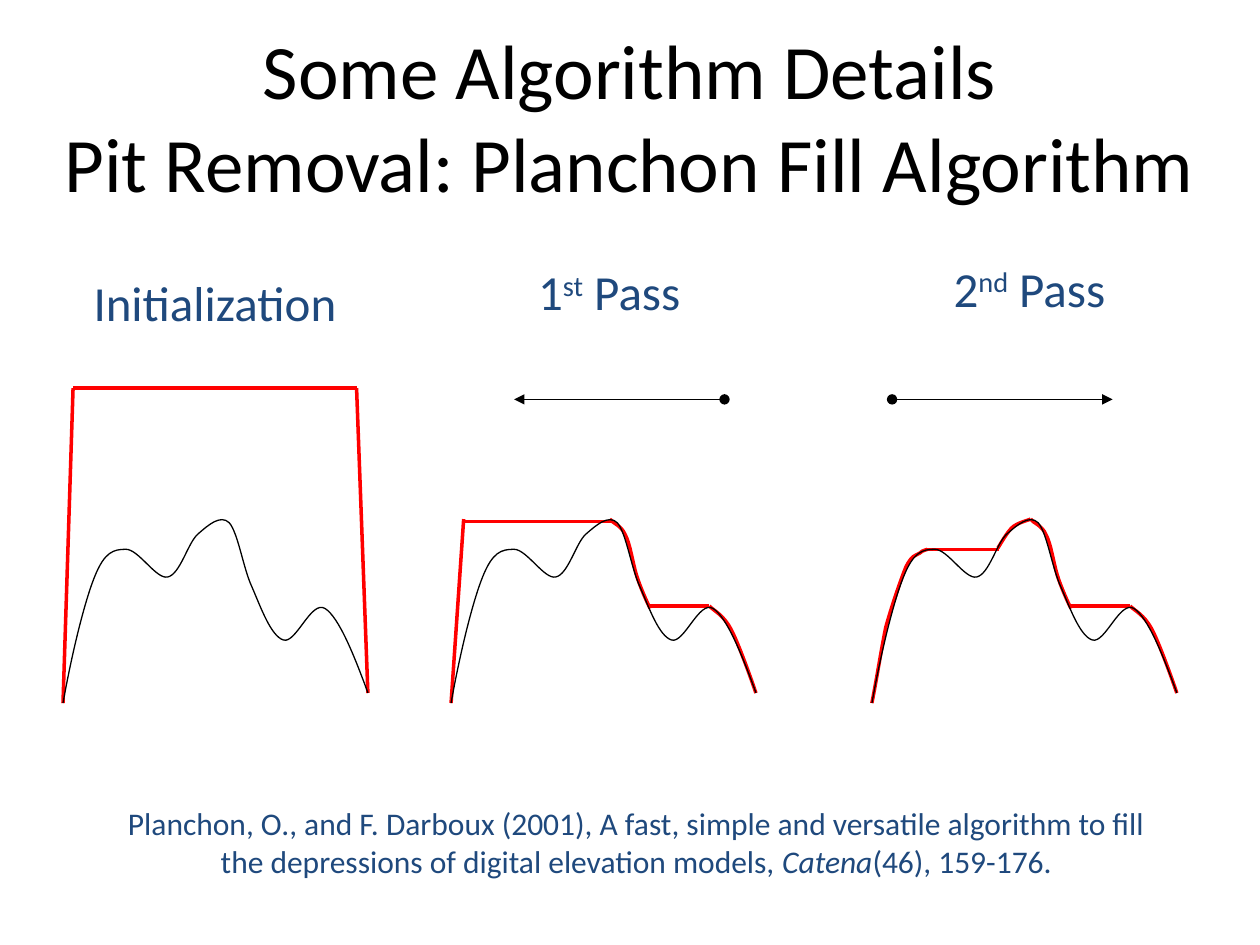
from dataclasses import dataclass

from lxml import etree
from pptx import Presentation
from pptx.dml.color import RGBColor
from pptx.enum.shapes import MSO_CONNECTOR, MSO_SHAPE
from pptx.enum.text import MSO_ANCHOR, MSO_AUTO_SIZE, PP_ALIGN
from pptx.oxml.ns import qn
from pptx.util import Inches, Pt

STRAIGHT = MSO_CONNECTOR.STRAIGHT
RECTANGLE = MSO_SHAPE.RECTANGLE
MIDDLE = MSO_ANCHOR.MIDDLE
NO_AUTOFIT = MSO_AUTO_SIZE.NONE
CENTER = PP_ALIGN.CENTER
TITLE_ONLY = 5


@dataclass(frozen=True)
class Theme:
    font: str = "Calibri"
    black: RGBColor = RGBColor(0, 0, 0)
    white: RGBColor = RGBColor(255, 255, 255)
    navy: RGBColor = RGBColor(0x1F, 0x49, 0x7D)
    red: RGBColor = RGBColor(255, 0, 0)
    title_size: int = 44
    heading_size: int = 28
    citation_size: int = 18
    thin: float = 0.75
    thick: float = 2


THEME = Theme()

PANEL_LEFTS = (0.5, 3.58, 6.92)

# Curves hold a start point and then three points per Bezier segment;
# x runs from the left edge of the panel.
TERRAIN = [
    (0, 5.58), (0.07, 5.19), (0.17, 4.78), (0.25, 4.58),
    (0.33, 4.38), (0.4, 4.36), (0.5, 4.36),
    (0.6, 4.36), (0.74, 4.6), (0.83, 4.58),
    (0.93, 4.56), (0.99, 4.31), (1.07, 4.24),
    (1.15, 4.17), (1.25, 4.08), (1.32, 4.15),
    (1.39, 4.23), (1.43, 4.51), (1.5, 4.66),
    (1.57, 4.82), (1.65, 5.05), (1.75, 5.08),
    (1.85, 5.11), (1.97, 4.76), (2.08, 4.83),
    (2.19, 4.9), (2.31, 5.2), (2.42, 5.5),
]
OUTER_SLOPE = [
    (2.42, 5.5), (2.39, 5.41), (2.28, 5.1), (2.22, 4.99),
    (2.16, 4.88), (2.09, 4.85), (2.05, 4.81),
]
PEAK_SLOPE = [
    (1.58, 4.83), (1.56, 4.79), (1.5, 4.66), (1.47, 4.56),
    (1.44, 4.46), (1.42, 4.31), (1.38, 4.24),
    (1.35, 4.17), (1.28, 4.15), (1.26, 4.12),
]
PEAK_RISE = [
    (1.26, 4.12), (1.24, 4.13), (1.15, 4.15), (1.11, 4.19),
    (1.07, 4.23), (1.02, 4.32), (1, 4.35),
]
INNER_SLOPE = [
    (0, 5.58), (0.04, 5.38), (0.07, 5.18), (0.11, 4.98),
    (0.16, 4.8), (0.23, 4.6), (0.27, 4.5),
    (0.32, 4.4), (0.35, 4.41), (0.38, 4.39),
    (0.41, 4.36), (0.43, 4.37), (0.44, 4.36),
]
RIGHT_POOL = ((2.05, 4.81), (1.58, 4.81))

PANEL_CURVES = (
    (),
    (OUTER_SLOPE, PEAK_SLOPE),
    (OUTER_SLOPE, PEAK_SLOPE, PEAK_RISE, INNER_SLOPE),
)
PANEL_LINES = (
    (((2.42, 5.5), (2.33, 3.08)), ((2.33, 3.08), (0.08, 3.08)), ((0, 5.58), (0.08, 3.08))),
    (RIGHT_POOL, ((1.27, 4.14), (0.09, 4.14)), ((0, 5.58), (0.1, 4.12))),
    (RIGHT_POOL, ((0.42, 4.36), (1.01, 4.36))),
)
HEADINGS = (
    ((0.58, 2.11, 2.25, 0.57), [("Initialization", {})]),
    ((3.42, 2.03, 2.83, 0.57), [("1", {}), ("st", {"raised": True}), (" Pass", {})]),
    ((6.92, 2, 2.5, 0.57), [("2", {}), ("nd", {"raised": True}), (" Pass", {})]),
)
CITATION = [
    ("Planchon, O., and F. Darboux (2001), A fast, simple and versatile algorithm "
     "to fill the depressions of digital elevation models, ", {}),
    ("Catena", {"italic": True}),
    ("(46), 159-176.", {}),
]


def add_span(para, text, size, color, italic=False, raised=False):
    span = para.add_run()
    span.text = text
    span.font.name = THEME.font
    span.font.size = Pt(size)
    span.font.color.rgb = color
    span.font.italic = italic
    if raised:
        span.font._element.set("baseline", "30000")


def add_title(page, lines):
    title = page.shapes.title
    title.left, title.top = Inches(0), Inches(0.29)
    title.width, title.height = Inches(10), Inches(1.25)
    frame = title.text_frame
    frame.word_wrap = True
    frame.auto_size = NO_AUTOFIT
    frame.vertical_anchor = MIDDLE
    para = frame.paragraphs[0]
    para.alignment = CENTER
    for index, line in enumerate(lines):
        if index:
            para.add_line_break()
        add_span(para, line, THEME.title_size, THEME.black)


def add_text(page, place, spans, size):
    box = page.shapes.add_textbox(*map(Inches, place))
    box.text_frame.word_wrap = True
    para = box.text_frame.paragraphs[0]
    para.alignment = CENTER
    for text, style in spans:
        add_span(para, text, size, THEME.navy, **style)


def add_backdrop(page):
    backdrop = page.shapes.add_shape(RECTANGLE, *map(Inches, (0.33, 1.42, 9.25, 4.83)))
    backdrop.shadow.inherit = False
    backdrop.line.fill.background()
    backdrop.fill.solid()
    backdrop.fill.fore_color.rgb = THEME.white
    color = next(backdrop._element.spPr.iter(qn("a:srgbClr")))
    etree.SubElement(color, qn("a:alpha"), val="90000")
    page.shapes.title._element.addprevious(backdrop._element)


def add_line(page, start, end, color, width, arrow=False):
    line = page.shapes.add_connector(STRAIGHT, *map(Inches, (*start, *end)))
    line.line.color.rgb = color
    line.line.width = Pt(width)
    if arrow:
        outline = line.line._get_or_add_ln()
        etree.SubElement(outline, qn("a:headEnd"), type="oval")
        etree.SubElement(outline, qn("a:tailEnd"), type="triangle")
    etree.SubElement(line._element.spPr, qn("a:effectLst"))


def bend_segments(curve):
    segments = list(curve._element.iter(qn("a:lnTo")))
    for first in range(0, len(segments), 3):
        trio = segments[first:first + 3]
        bezier = etree.Element(qn("a:cubicBezTo"))
        trio[0].addprevious(bezier)
        for segment in trio:
            bezier.append(segment[0])
            segment.getparent().remove(segment)


def add_curve(page, left, knots, color, width):
    start, *rest = [(Inches(left + x), Inches(y)) for x, y in knots]
    builder = page.shapes.build_freeform(*start)
    builder.add_line_segments(rest, close=False)
    curve = builder.convert_to_shape()
    bend_segments(curve)
    curve.shadow.inherit = False
    curve.fill.background()
    curve.line.color.rgb = color
    curve.line.width = Pt(width)


def add_panel(page, left, curves, lines):
    for knots in curves:
        add_curve(page, left, knots, THEME.red, THEME.thick)
    for ends in lines:
        start, end = [(left + x, y) for x, y in ends]
        add_line(page, start, end, THEME.red, THEME.thick)
    add_curve(page, left, TERRAIN, THEME.black, THEME.thin)


def main():
    deck = Presentation()
    deck.slide_width, deck.slide_height = Inches(10), Inches(7.5)
    page = deck.slides.add_slide(deck.slide_layouts[TITLE_ONLY])
    add_backdrop(page)
    add_title(page, ["Some Algorithm Details", "Pit Removal: Planchon Fill Algorithm"])
    for left, curves, lines in zip(PANEL_LEFTS, PANEL_CURVES, PANEL_LINES):
        add_panel(page, left, curves, lines)
    for place, spans in HEADINGS:
        add_text(page, place, spans, THEME.heading_size)
    for start_x, end_x in ((5.75, 4.08), (7.08, 8.83)):
        add_line(page, (start_x, 3.17), (end_x, 3.17), THEME.black, THEME.thin, arrow=True)
    add_text(page, (0.74, 6.33, 8.62, 0.71), CITATION, THEME.citation_size)
    deck.save("out.pptx")


if __name__ == "__main__":
    main()
